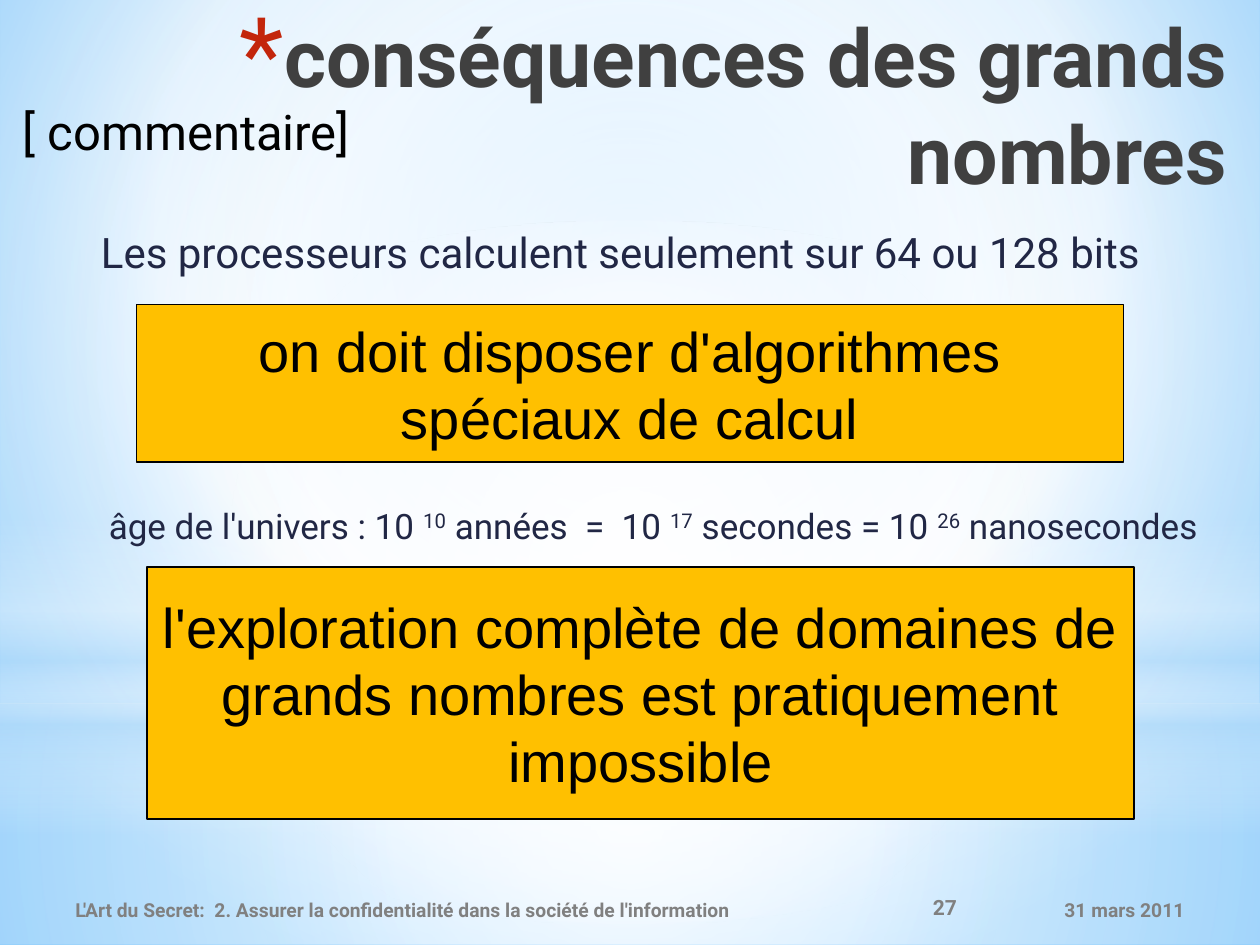
import dataclasses
import typing

import lxml.etree
import pptx
import pptx.dml.color
import pptx.enum.shapes
import pptx.enum.text
import pptx.oxml.ns
import pptx.util

Pt = pptx.util.Pt
Align = pptx.enum.text.PP_ALIGN
Anchor = pptx.enum.text.MSO_ANCHOR
Kind = pptx.enum.shapes.MSO_SHAPE
qn = pptx.oxml.ns.qn


@dataclasses.dataclass(frozen=True)
class Theme:
    font: str = "Roboto"
    plain: str = "Arial"
    white: str = "FFFFFF"
    pale: str = "B4DCFA"
    ink: str = "212745"
    black: str = "000000"
    head: str = "404040"
    gray: str = "808080"
    gold: str = "FFC000"
    star: str = "C3260C"
    title: float = 46
    box: float = 32
    note: float = 28
    lead: float = 24
    fact: float = 20
    page: float = 12
    foot: float = 11


THEME = Theme()


class Area(typing.NamedTuple):
    left: float
    top: float
    width: float
    height: float


class Stop(typing.NamedTuple):
    pos: float
    color: str
    alpha: float = 100


@dataclasses.dataclass(frozen=True)
class Glow:
    area: Area
    stops: tuple
    kind: typing.Any = Kind.RECTANGLE
    angle: typing.Optional[float] = None


@dataclasses.dataclass(frozen=True)
class Label:
    area: Area
    text: str
    style: dict


def rgb(color: str):
    return pptx.dml.color.RGBColor.from_string(color)


def blend(owner, stops, focus=(50, 50, 50, 50), angle=None) -> None:
    """Swap the owner's solid fill for a gradient."""
    def sub(node, tag, **attrs):
        return lxml.etree.SubElement(node, qn(tag), attrs)

    grad = lxml.etree.Element(qn("a:gradFill"), rotWithShape="1")
    items = sub(grad, "a:gsLst")
    for stop in stops:
        point = sub(items, "a:gs", pos=str(stop.pos * 1000))
        color = sub(point, "a:srgbClr", val=stop.color)
        if stop.alpha < 100:
            sub(color, "a:alpha", val=str(stop.alpha * 1000))
    if angle is None:
        shade = sub(grad, "a:path", path="circle")
        sub(shade, "a:fillToRect", **{side: str(part * 1000) for side, part in zip("ltrb", focus)})
    else:
        sub(grad, "a:lin", ang=str(angle * 60000), scaled="0")
    solid = owner.find(qn("a:solidFill"))
    owner.replace(solid, grad)


def shape(slide, area: Area, kind, fill: str, line: typing.Optional[str] = None):
    item = slide.shapes.add_shape(kind, *map(Pt, area))
    item.shadow.inherit = False
    item.fill.solid()
    item.fill.fore_color.rgb = rgb(fill)
    if line:
        item.line.color.rgb = rgb(line)
        item.line.width = Pt(0.75)
    else:
        item.line.fill.background()
    return item


def write(item, text: str, *, size: float, color: str, font: str = THEME.font,
          bold: bool = False, align=Align.LEFT, anchor=Anchor.MIDDLE, wrap: bool = True):
    """Write one paragraph; parts between carets are raised."""
    frame = item.text_frame
    frame.word_wrap = wrap
    frame.vertical_anchor = anchor
    para = frame.paragraphs[0]
    para.alignment = align
    for index, part in enumerate(text.split("^")):
        run = para.add_run()
        run.text = part
        run.font.name = font
        run.font.size = Pt(size)
        run.font.bold = bold
        run.font.color.rgb = rgb(color)
        if index % 2:
            run.font._element.set("baseline", "30000")
    return para


def label(slide, part: Label):
    return write(slide.shapes.add_textbox(*map(Pt, part.area)), part.text, **part.style)


def bullet(para, mark: str, color: str, scale: int, hang: float) -> None:
    props = para._p.get_or_add_pPr()
    props.set("marL", str(Pt(hang)))
    props.set("indent", str(-Pt(hang)))
    tint = lxml.etree.SubElement(props, qn("a:buClr"))
    lxml.etree.SubElement(tint, qn("a:srgbClr"), val=color)
    lxml.etree.SubElement(props, qn("a:buSzPct"), val=str(scale * 1000))
    lxml.etree.SubElement(props, qn("a:buFont"), typeface=THEME.font)
    lxml.etree.SubElement(props, qn("a:buChar"), char=mark)


W, P = THEME.white, THEME.pale
GLOWS = (
    Glow(Area(0, 401.8, 720, 138.2), (Stop(0, W, 91), Stop(37, W, 76), Stop(100, P, 79))),
    Glow(Area(0, 0, 720, 401.8), (Stop(0, W, 89), Stop(48, W, 62), Stop(100, P, 79))),
    Glow(Area(0, 296.6, 720, 180),
         (Stop(0, W, 0), Stop(29, W, 30), Stop(45, P, 40),
          Stop(55, W, 26), Stop(65, P, 60), Stop(100, W, 0)), angle=90),
    Glow(Area(0, 126, 720, 401.8), (Stop(0, W), Stop(56, W, 0)), Kind.OVAL),
)

FOOT = dict(size=THEME.foot, color=THEME.gray, bold=True)
LINE = dict(color=THEME.ink, align=Align.CENTER, wrap=False)
LABELS = (
    Label(Area(570, 505.5, 114, 28.8), "31 mars 2011", FOOT | dict(align=Align.RIGHT)),
    Label(Area(36, 505.5, 474, 28.8),
          "L'Art du Secret:  2. Assurer la confidentialité dans la société de l'information", FOOT),
    Label(Area(510, 504, 60, 28.8), "27", FOOT | dict(size=THEME.page, align=Align.CENTER)),
    Label(Area(49, 126, 611, 36),
          "Les processeurs calculent seulement sur 64 ou 128 bits", LINE | dict(size=THEME.lead)),
    Label(Area(51.8, 284.4, 643, 31.7),
          "âge de l'univers : 10 ^10^ années  =  10 ^17^ secondes = 10 ^26^ nanosecondes",
          LINE | dict(size=THEME.fact)),
    Label(Area(6, 54.7, 211, 41), "[ commentaire]",
          dict(size=THEME.note, color=THEME.black, anchor=Anchor.TOP, wrap=False)),
)
TITLE = Label(Area(0, 0.7, 708, 90), "conséquences des grands nombres",
              dict(size=THEME.title, color=THEME.head, bold=True,
                   align=Align.RIGHT, anchor=Anchor.TOP))
BOX = dict(size=THEME.box, color=THEME.black, font=THEME.plain, align=Align.CENTER)
BOXES = (
    Label(Area(78, 174, 564, 90), "on doit disposer d'algorithmes spéciaux de calcul", BOX),
    Label(Area(84, 324, 564, 144),
          "l'exploration complète de domaines de grands nombres est pratiquement impossible", BOX),
)


def main() -> None:
    deck = pptx.Presentation()
    deck.slide_width, deck.slide_height = Pt(720), Pt(540)
    slide = deck.slides.add_slide(deck.slide_layouts[6])

    # Background and its glows
    back = slide.background.fill
    back.solid()
    back.fore_color.rgb = rgb(W)
    blend(slide._element.find(".//" + qn("p:bgPr")),
          (Stop(0, "9ED5FF"), Stop(60, W), Stop(100, "5BB9FF")), (20, 10, 20, 60))
    for glow in GLOWS:
        item = shape(slide, glow.area, glow.kind, W)
        blend(item._element.spPr, glow.stops, angle=glow.angle)

    # Title with its star
    bullet(label(slide, TITLE), "*", THEME.star, 128, 25.2)

    # Gold boxes
    for part in BOXES:
        write(shape(slide, part.area, Kind.RECTANGLE, THEME.gold, THEME.black),
              part.text, **part.style)

    # Statements and footer
    for part in LABELS:
        label(slide, part)

    deck.save("out.pptx")


if __name__ == "__main__":
    main()
